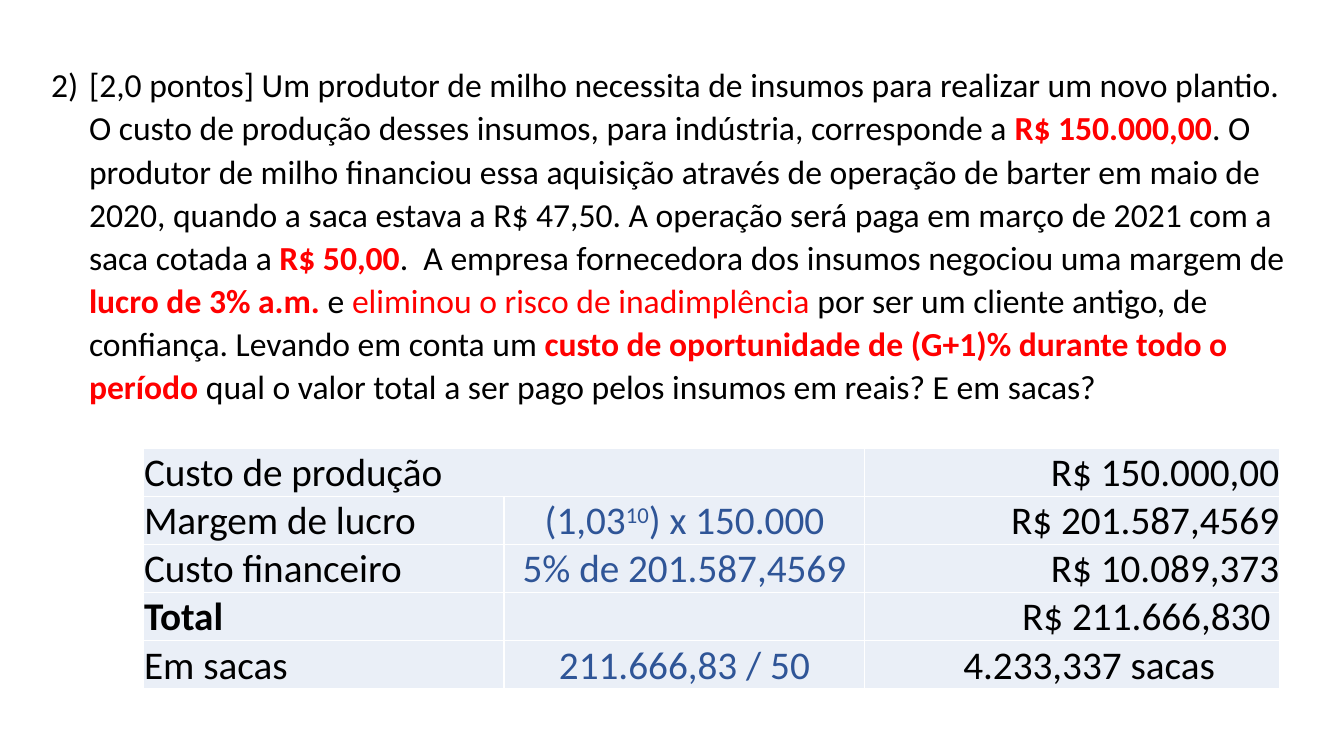
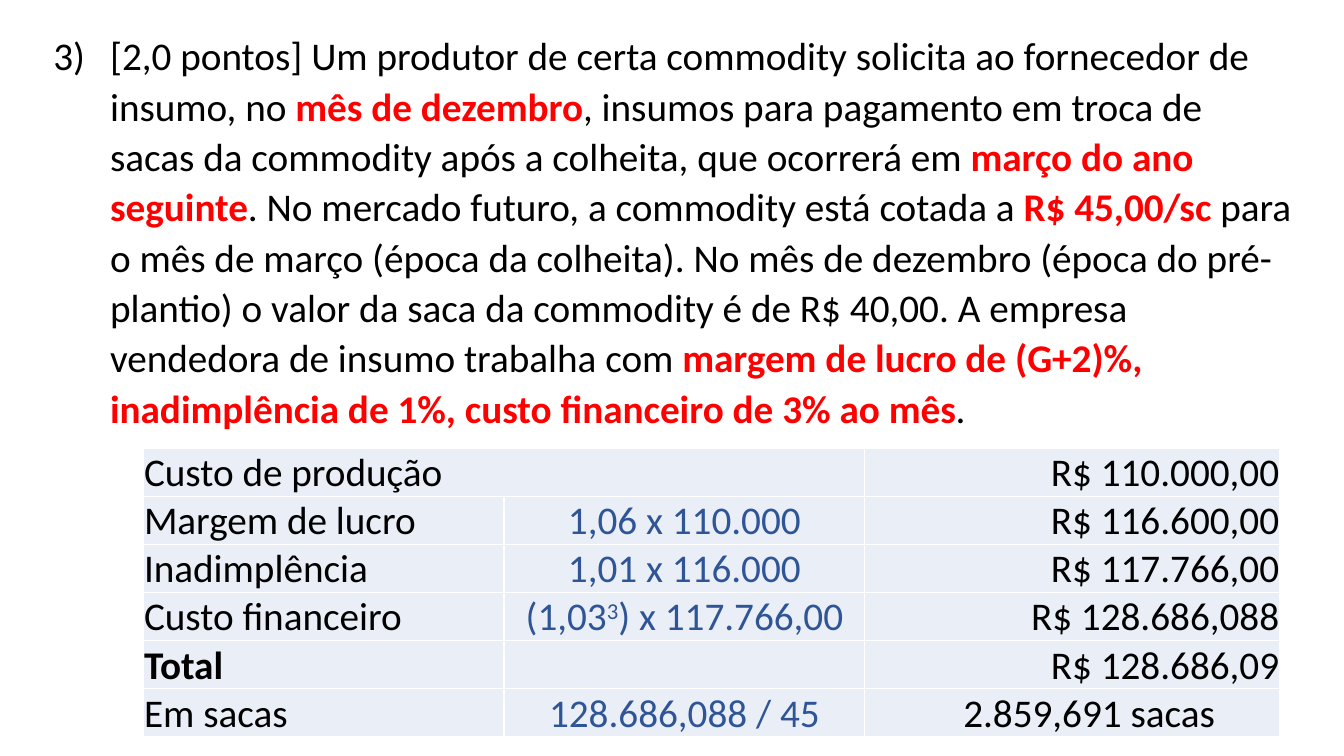
import pptx
import pptx.util
import pptx.dml.color
import pptx.enum.text
import pptx.oxml
import pptx.oxml.ns
from dataclasses import dataclass

Pt = pptx.util.Pt
Align = pptx.enum.text.PP_ALIGN


@dataclass(frozen=True)
class Theme:
    font: str = "Calibri"
    text: str = "000000"
    highlight: str = "FF0000"
    formula: str = "2F5597"
    cell: str = "EAEFF7"
    border: str = "FFFFFF"
    question_size: float = 24
    large_size: float = 28
    line_spacing: float = 1.07
    space_after: float = 8


THEME = Theme()
SLIDE_SIZE = (960, 540)
TABLE_ORIGIN = (102.2, 320.4)
COLUMN_WIDTHS = (257.8, 257.8, 296.6)
ROW_HEIGHT = 34.3
CELL_INSET = 0.7
RED = {"color": THEME.highlight}
KEY = {"color": THEME.highlight, "bold": True}
RAISED = {"superscript": True}


def rgb(value):
    return pptx.dml.color.RGBColor.from_string(value)


def add_text(paragraph, text, size=THEME.large_size, color=THEME.text,
             bold=False, superscript=False):
    run = paragraph.add_run()
    run.text = text
    run.font.name = THEME.font
    run.font.size = Pt(size)
    run.font.bold = bold
    run.font.color.rgb = rgb(color)
    if superscript:
        run.font._element.set("baseline", "30000")


def add_runs(paragraph, content, **style):
    """Write a string, or a list of strings and (string, format) pairs."""
    for part in [content] if isinstance(content, str) else content:
        text, extra = (part, {}) if isinstance(part, str) else part
        add_text(paragraph, text, **{**style, **extra})


def number_paragraph(paragraph, number, indent):
    properties = paragraph._p.get_or_add_pPr()
    properties.set("marL", str(Pt(indent)))
    properties.set("indent", str(-Pt(indent)))
    bullet = pptx.oxml.parse_xml(
        f'<a:buAutoNum {pptx.oxml.ns.nsdecls("a")} type="arabicParenR" startAt="{number}"/>')
    properties.append(bullet)


def add_question(slide, box, number, indent, size, content):
    shape = slide.shapes.add_textbox(*(Pt(length) for length in box))
    frame = shape.text_frame
    frame.word_wrap = True
    frame.auto_size = pptx.enum.text.MSO_AUTO_SIZE.SHAPE_TO_FIT_TEXT
    paragraph = frame.paragraphs[0]
    number_paragraph(paragraph, number, indent)
    paragraph.line_spacing = THEME.line_spacing
    paragraph.space_after = Pt(THEME.space_after)
    add_runs(paragraph, content, size=size)


def format_cell(cell):
    properties = cell._tc.get_or_add_tcPr()
    for side in ("lnL", "lnR", "lnT", "lnB"):
        properties.append(pptx.oxml.parse_xml(
            f'<a:{side} {pptx.oxml.ns.nsdecls("a")} w="{Pt(1)}"><a:solidFill>'
            f'<a:srgbClr val="{THEME.border}"/></a:solidFill></a:{side}>'))
    cell.fill.solid()
    cell.fill.fore_color.rgb = rgb(THEME.cell)
    cell.vertical_anchor = pptx.enum.text.MSO_ANCHOR.BOTTOM
    cell.margin_left = cell.margin_right = cell.margin_top = Pt(CELL_INSET)
    cell.margin_bottom = 0


def add_cost_table(slide, origin, rows, total_inset=CELL_INSET):
    left, top = origin
    table = slide.shapes.add_table(
        len(rows), len(COLUMN_WIDTHS), Pt(left), Pt(top),
        Pt(sum(COLUMN_WIDTHS)), Pt(ROW_HEIGHT * len(rows))).table
    table.first_row = table.horz_banding = False
    for column, width in zip(table.columns, COLUMN_WIDTHS):
        column.width = Pt(width)

    # Label, formula and value of each row
    for row_index, row in enumerate(rows):
        table.rows[row_index].height = Pt(ROW_HEIGHT)
        alignments = (Align.LEFT, Align.CENTER, Align.RIGHT)
        for column_index, (content, alignment) in enumerate(zip(row, alignments)):
            cell = table.cell(row_index, column_index)
            format_cell(cell)
            paragraph = cell.text_frame.paragraphs[0]
            paragraph.alignment = alignment
            if content:
                add_runs(paragraph, content,
                         color=THEME.formula if column_index == 1 else THEME.text,
                         bold=content == "Total")

    # Production cost spans two columns; the last two values are inset
    table.cell(0, 0).merge(table.cell(0, 1))
    table.cell(len(rows) - 2, 2).margin_right = Pt(total_inset)
    sacks = table.cell(len(rows) - 1, 2)
    sacks.margin_left = Pt(70.3)
    sacks.text_frame.paragraphs[0].alignment = Align.LEFT


def add_question_slide(presentation, question, table):
    slide = presentation.slides.add_slide(presentation.slide_layouts[6])
    add_question(slide, **question)
    add_cost_table(slide, TABLE_ORIGIN, **table)


BARTER_QUESTION = {
    "box": (29.5, 40.3, 911.5, 256.3), "number": 2, "indent": 27,
    "size": THEME.question_size,
    "content": [
        "[2,0 pontos] Um produtor de milho necessita de insumos para realizar um novo "
        "plantio. O custo de produção desses insumos, para indústria, corresponde a ",
        ("R$ 150.000,00", KEY),
        ". O produtor de milho financiou essa aquisição através de operação de barter em "
        "maio de 2020, quando a saca estava a R$ 47,50. A operação será paga em março de "
        "2021 com a saca cotada a ",
        ("R$ 50,00", KEY),
        ".  A empresa fornecedora dos insumos negociou uma margem de ",
        ("lucro de 3% a.m. ", KEY),
        "e ",
        ("eliminou o risco de inadimplência ", RED),
        "por ser um cliente antigo, de confiança. Levando em conta um ",
        ("custo de oportunidade de (G+1)% durante todo o período ", KEY),
        "qual o valor total a ser pago pelos insumos em reais? E em sacas?",
    ],
}
BARTER_TABLE = {
    "total_inset": 7,
    "rows": [
        ("Custo de produção", "", "R$ 150.000,00"),
        ("Margem de lucro", ["(1,03", ("10", RAISED), ") x 150.000"], "R$ 201.587,4569"),
        ("Custo financeiro", "5% de 201.587,4569", "R$ 10.089,373"),
        ("Total", "", "R$ 211.666,830"),
        ("Em sacas", "211.666,83 / 50", "4.233,337 sacas"),
    ],
}
COMMODITY_QUESTION = {
    "box": (31, 16.6, 898.6, 297.4), "number": 3, "indent": 40.5,
    "size": THEME.large_size,
    "content": [
        "[2,0 pontos] Um produtor de certa commodity solicita ao fornecedor de insumo, no ",
        ("mês de dezembro", KEY),
        ", insumos para pagamento em troca de sacas da commodity após a colheita, que "
        "ocorrerá em ",
        ("março do ano seguinte", KEY),
        ". No mercado futuro, a commodity está cotada a ",
        ("R$ 45,00/sc ", KEY),
        "para o mês de março (época da colheita). No mês de dezembro (época do "
        "pré-plantio) o valor da saca da commodity é de R$ 40,00. A empresa vendedora de "
        "insumo trabalha com ",
        ("margem de lucro de (G+2)%, inadimplência de 1%, custo financeiro de 3% ao mês", KEY),
        ".",
    ],
}
COMMODITY_TABLE = {
    "rows": [
        ("Custo de produção", "", "R$ 110.000,00"),
        ("Margem de lucro", "1,06 x 110.000", "R$ 116.600,00"),
        ("Inadimplência", "1,01 x 116.000", "R$ 117.766,00"),
        ("Custo financeiro", ["(1,03", ("3", RAISED), ") x 117.766,00"], "R$ 128.686,088"),
        ("Total", "", "R$ 128.686,09"),
        ("Em sacas", "128.686,088 / 45", "2.859,691 sacas"),
    ],
}


def main():
    presentation = pptx.Presentation()
    presentation.slide_width, presentation.slide_height = map(Pt, SLIDE_SIZE)
    add_question_slide(presentation, BARTER_QUESTION, BARTER_TABLE)
    add_question_slide(presentation, COMMODITY_QUESTION, COMMODITY_TABLE)
    presentation.save("out.pptx")


if __name__ == "__main__":
    main()
